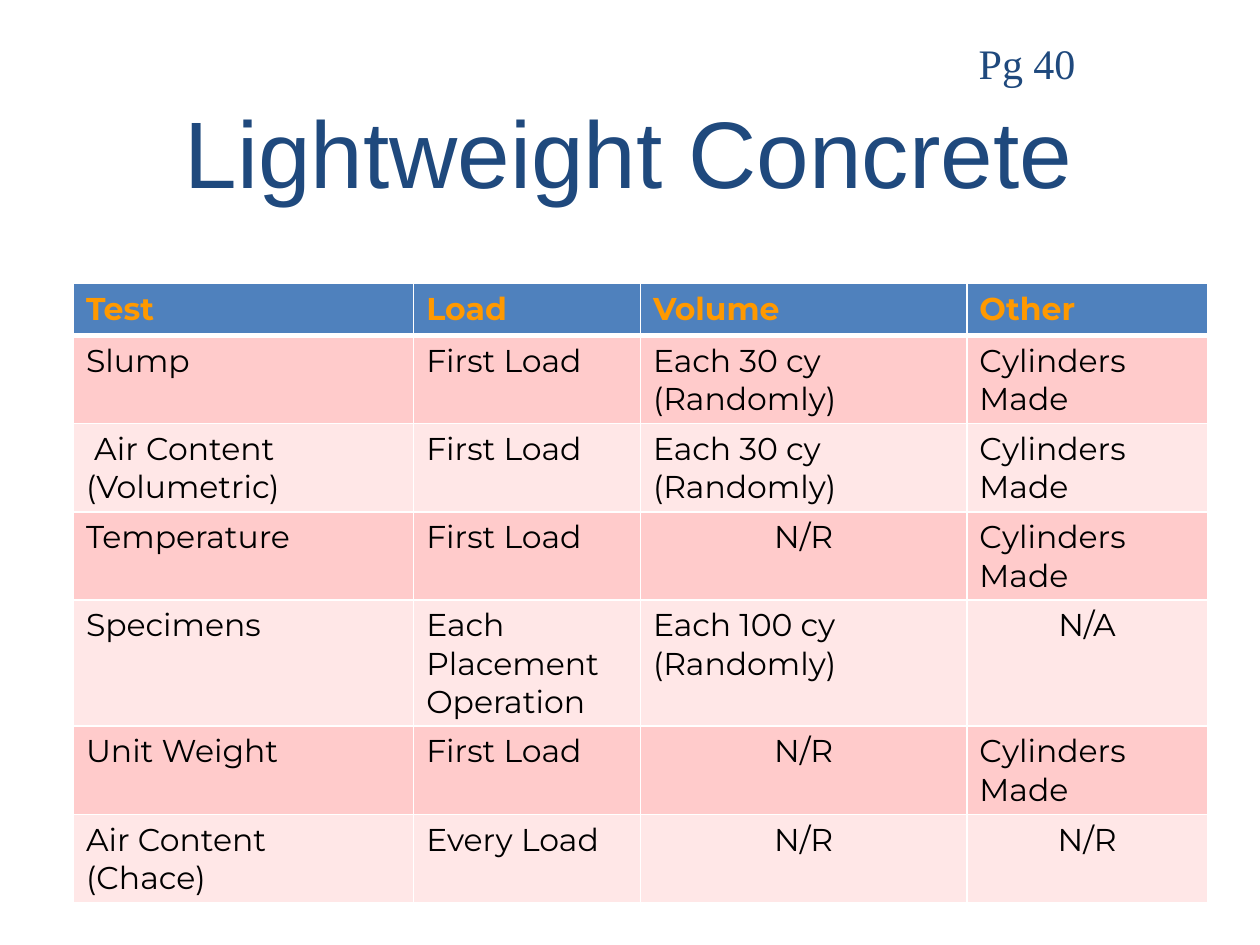
from dataclasses import dataclass

from lxml.etree import SubElement
from pptx import Presentation
from pptx.dml.color import RGBColor
from pptx.enum.text import MSO_ANCHOR, PP_ALIGN
from pptx.oxml.ns import qn
from pptx.util import Cm, Pt


@dataclass(frozen=True)
class Theme:
    navy: str = "1F497D"
    header_fill: str = "4F81BD"
    header_text: str = "FF9900"
    body_text: str = "000000"
    bands: tuple = ("FFCBCB", "FFE7E7")
    rule: str = "FFFFFF"
    title_font: str = "Arial"
    table_font: str = "Montserrat"
    page_font: str = "Times New Roman"
    title_size: int = 54
    table_size: int = 18
    page_size: int = 24
    thin: int = 1
    thick: int = 3


THEME = Theme()

COLUMN_WIDTHS = (6.86, 4.57, 6.58, 4.85)
ROW_HEIGHT = 1.04
TESTS = (
    ("Test", "Load", "Volume", "Other"),
    ("Slump", "First Load", "Each 30 cy (Randomly)", "Cylinders Made"),
    (" Air Content\n(Volumetric)", "First Load", "Each 30 cy (Randomly)", "Cylinders Made"),
    ("Temperature", "First Load", "N/R", "Cylinders Made"),
    ("Specimens", "Each Placement Operation", "Each 100 cy (Randomly)", "N/A"),
    ("Unit Weight", "First Load", "N/R", "Cylinders Made"),
    ("Air Content\n(Chace)", "Every Load", "N/R", "N/R"),
)


def write(tf, text, font, size, color, bold=False, align=PP_ALIGN.LEFT):
    """Fill a text frame, one paragraph per line of text."""
    for i, line in enumerate(text.split("\n")):
        p = tf.add_paragraph() if i else tf.paragraphs[0]
        p.alignment = align
        r = p.add_run()
        r.text = line
        r.font.name = font
        r.font.size = Pt(size)
        r.font.bold = bold
        r.font.color.rgb = RGBColor.from_string(color)


def add_label(s, box, text, font, size, align=PP_ALIGN.LEFT, anchor=MSO_ANCHOR.TOP):
    sp = s.shapes.add_textbox(*map(Cm, box))
    tf = sp.text_frame
    tf.word_wrap = True
    tf.vertical_anchor = anchor
    write(tf, text, font, size, THEME.navy, align=align)


def set_borders(cell, top, bottom):
    tc_pr = cell._tc.get_or_add_tcPr()
    widths = {"a:lnL": THEME.thin, "a:lnR": THEME.thin, "a:lnT": top, "a:lnB": bottom}
    for tag, width in widths.items():
        ln = SubElement(tc_pr, qn(tag), w=str(Pt(width)))
        fill = SubElement(ln, qn("a:solidFill"))
        SubElement(fill, qn("a:srgbClr"), val=THEME.rule)


def style_cell(cell, row, text):
    header = row == 0
    # The heavy rule lies between the header and the first test
    set_borders(cell, THEME.thick if row == 1 else THEME.thin,
                THEME.thick if header else THEME.thin)
    cell.fill.solid()
    fill = THEME.header_fill if header else THEME.bands[(row - 1) % 2]
    cell.fill.fore_color.rgb = RGBColor.from_string(fill)
    write(cell.text_frame, text, THEME.table_font, THEME.table_size,
          THEME.header_text if header else THEME.body_text, bold=header,
          align=PP_ALIGN.CENTER if text.startswith("N/") else PP_ALIGN.LEFT)


def add_test_table(s, left, top):
    table = s.shapes.add_table(
        len(TESTS), len(COLUMN_WIDTHS), Cm(left), Cm(top),
        Cm(sum(COLUMN_WIDTHS)), Cm(ROW_HEIGHT * len(TESTS))).table
    for column, width in zip(table.columns, COLUMN_WIDTHS):
        column.width = Cm(width)
    for i, texts in enumerate(TESTS):
        table.rows[i].height = Cm(ROW_HEIGHT)
        for j, text in enumerate(texts):
            style_cell(table.cell(i, j), i, text)


def main():
    prs = Presentation()
    prs.slide_width, prs.slide_height = Cm(25.4), Cm(19.05)
    s = prs.slides.add_slide(prs.slide_layouts[6])

    # Title
    add_label(s, (1.9, 1.57, 21.54, 2.92), "Lightweight Concrete", THEME.title_font,
              THEME.title_size, PP_ALIGN.CENTER, MSO_ANCHOR.MIDDLE)
    # Testing frequency
    add_test_table(s, 1.48, 5.72)
    # Page reference
    add_label(s, (19.48, 0.64, 3.6, 1.27), "Pg 40", THEME.page_font, THEME.page_size)

    prs.save("out.pptx")


if __name__ == "__main__":
    main()
